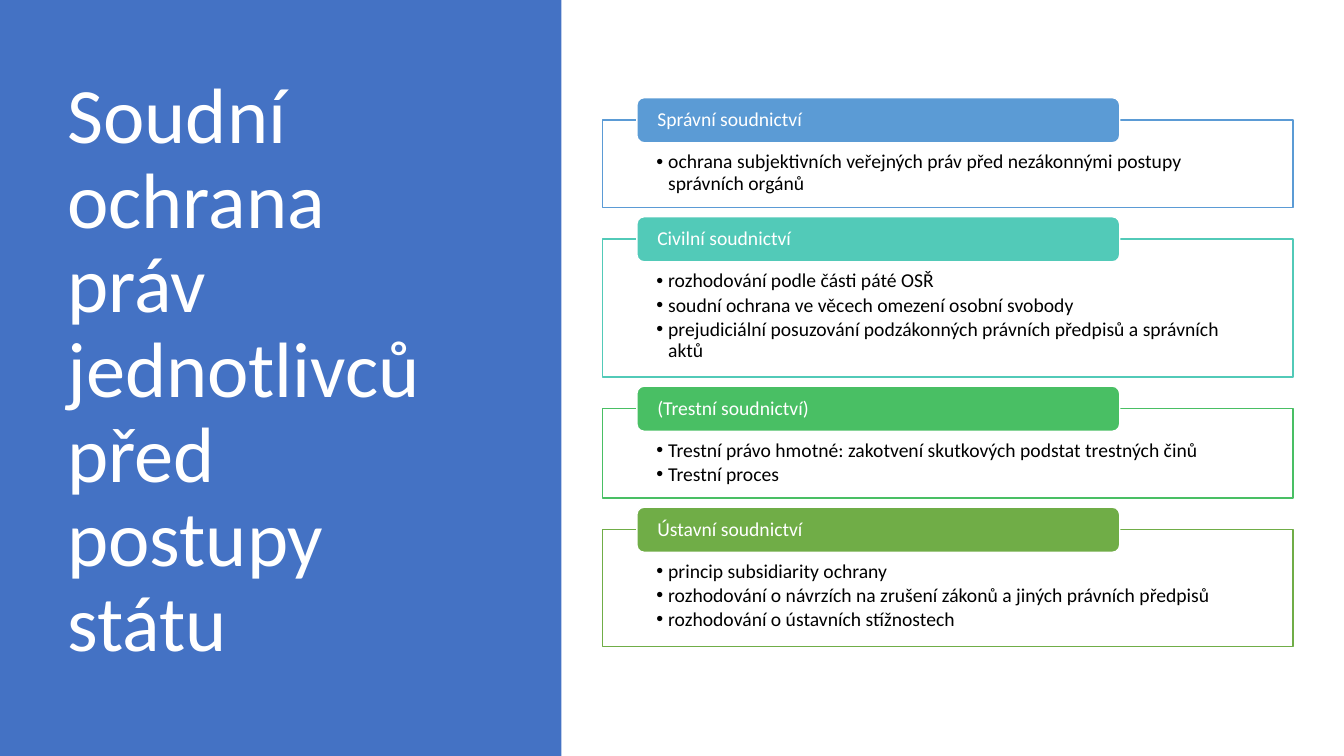
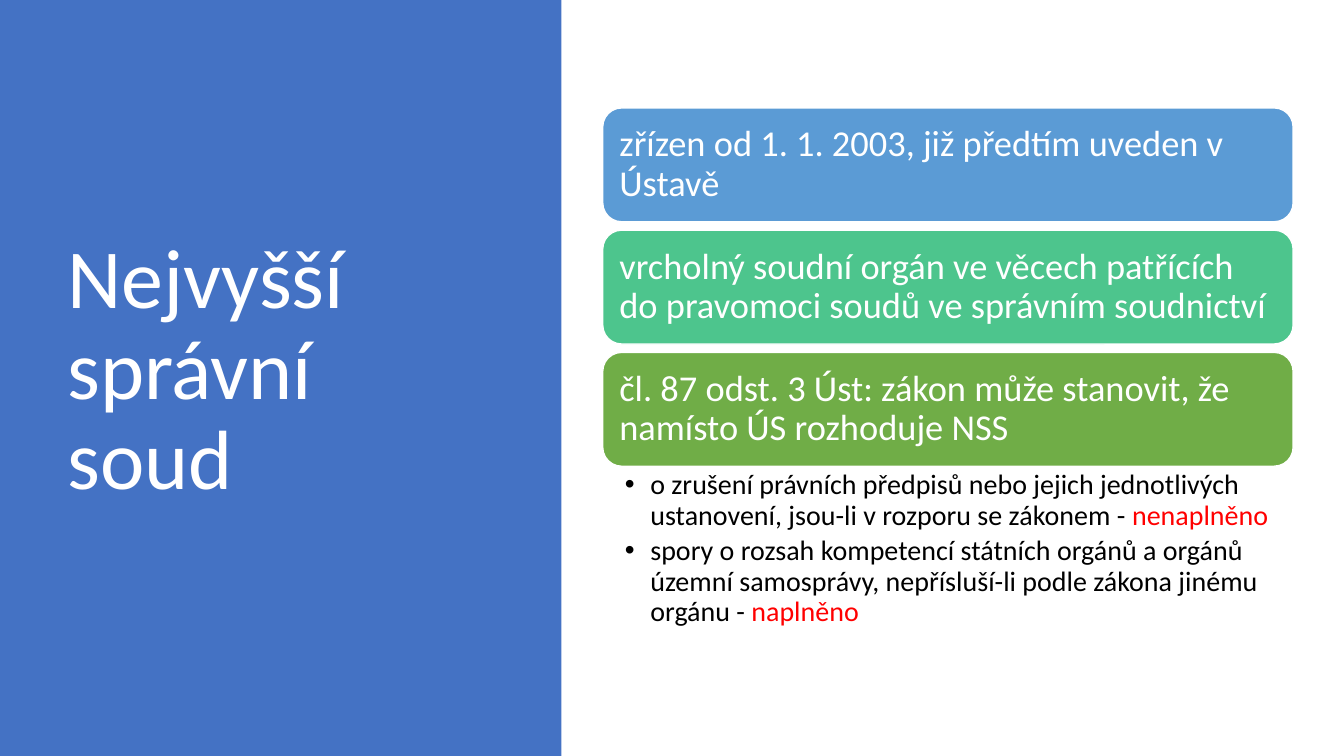
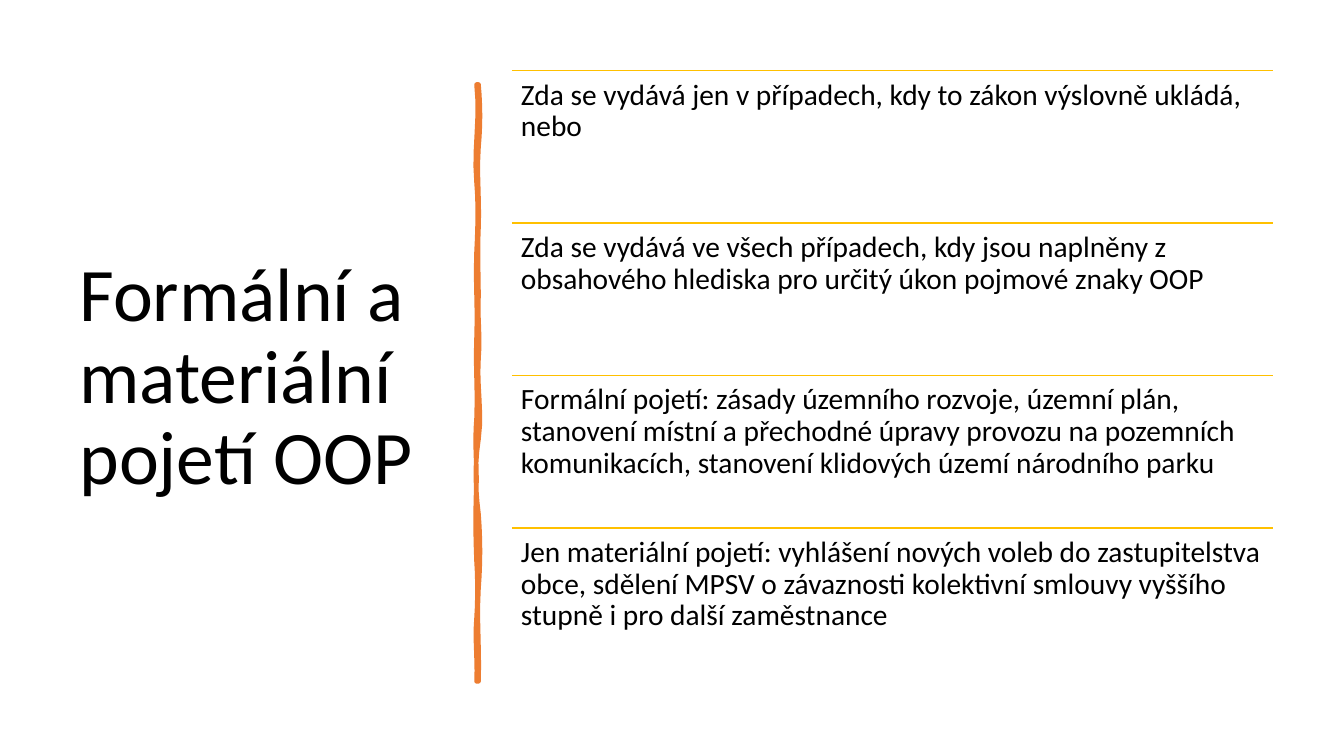
"""Build three slides on judicial protection and the formal and material concept of measures."""
from dataclasses import dataclass

from lxml import etree
from pptx import Presentation
from pptx.dml.color import RGBColor
from pptx.enum.shapes import MSO_CONNECTOR, MSO_SHAPE
from pptx.enum.text import MSO_ANCHOR, PP_ALIGN
from pptx.oxml.ns import qn
from pptx.util import Cm, Pt

RECTANGLE = MSO_SHAPE.RECTANGLE
ROUNDED = MSO_SHAPE.ROUNDED_RECTANGLE
STRAIGHT = MSO_CONNECTOR.STRAIGHT
TOP = MSO_ANCHOR.TOP
MIDDLE = MSO_ANCHOR.MIDDLE
LEFT = PP_ALIGN.LEFT

FONT = "Calibri"
WHITE, BLACK, RED = "FFFFFF", "000000", "FF0000"
BLUE, ORANGE, GOLD = "4472C4", "ED7D31", "FFC000"
SLIDE_WIDTH, SLIDE_HEIGHT = 33.87, 19.05
PANEL_WIDTH = 14.15
CONTENT_LEFT, CONTENT_WIDTH = 15.19, 17.4


@dataclass(frozen=True)
class Box:
    left: float
    top: float
    width: float
    height: float


@dataclass(frozen=True)
class TextStyle:
    size: float
    color: str
    anchor: MSO_ANCHOR = TOP
    insets: tuple[float, float, float, float] = (0.25, 0.13, 0.25, 0.13)
    bullet_indent: float = 0
    space_after: float = 0


@dataclass(frozen=True)
class Run:
    text: str
    color: str | None = None


@dataclass(frozen=True)
class Card:
    heading: str
    bullets: tuple[str, ...]
    height: float
    color: str


@dataclass(frozen=True)
class Banner:
    text: str
    color: str


@dataclass(frozen=True)
class Wave:
    end: float
    first_pull: float
    second_pull: float


PANEL_TITLE_BOX = Box(1.45, 1.73, 10.57, 15.29)
PLAIN_TITLE_BOX = Box(1.75, 1.78, 9.5, 15.52)

CARD_TOP, CARD_GAP = 3.02, 0.79
CARD_STYLE = TextStyle(14, BLACK, TOP, (1.35, 0.81, 1.35, 0.28), 0.3, 2.1)
HEADING_STYLE = TextStyle(14, WHITE, MIDDLE, (0.46, 0, 0.46, 0))
HEADING_LEFT, HEADING_WIDTH, HEADING_HEIGHT, HEADING_RISE = 16.05, 12.17, 1.14, 0.56
CARDS = (
    Card("Správní soudnictví",
         ("ochrana subjektivních veřejných práv před nezákonnými postupy správních orgánů",),
         2.21, "5B9BD5"),
    Card("Civilní soudnictví",
         ("rozhodování podle části páté OSŘ",
          "soudní ochrana ve věcech omezení osobní svobody",
          "prejudiciální posuzování podzákonných právních předpisů a správních aktů"),
         3.48, "52CAB8"),
    Card("(Trestní soudnictví)",
         ("Trestní právo hmotné: zakotvení skutkových podstat trestných činů",
          "Trestní proces"),
         2.26, "49BF64"),
    Card("Ústavní soudnictví",
         ("princip subsidiarity ochrany",
          "rozhodování o návrzích na zrušení zákonů a jiných právních předpisů",
          "rozhodování o ústavních stížnostech"),
         2.95, "70AD47"),
)

BANNER_TOP, BANNER_HEIGHT, BANNER_PITCH = 2.72, 2.87, 3.08
BANNER_STYLE = TextStyle(26, WHITE, MIDDLE, (0.28, 0.28, 0.28, 0.28))
DETAIL_STYLE = TextStyle(20, BLACK, TOP, (0.56, 0.1, 0.51, 0.1), 0.64, 4)
BANNERS = (
    Banner("zřízen od 1. 1. 2003, již předtím uveden v Ústavě", "5B9BD5"),
    Banner("vrcholný soudní orgán ve věcech patřících do pravomoci soudů ve správním soudnictví",
           "4DC58D"),
    Banner("čl. 87 odst. 3 Úst: zákon může stanovit, že namísto ÚS rozhoduje NSS", "70AD47"),
)
DETAILS = (
    (Run("o zrušení právních předpisů nebo jejich jednotlivých ustanovení, "
         "jsou-li v rozporu se zákonem - "), Run("nenaplněno", RED)),
    (Run("spory o rozsah kompetencí státních orgánů a orgánů územní samosprávy, "
         "nepřísluší-li podle zákona jinému orgánu - "), Run("naplněno", RED)),
)

ROW_LEFT, ROW_TOP, ROW_WIDTH, ROW_HEIGHT = 12.9, 1.78, 19.18, 3.84
ROW_STYLE = TextStyle(21, BLACK, TOP, (0.23, 0.23, 0.23, 0.23))
ROWS = (
    "Zda se vydává jen v případech, kdy to zákon výslovně ukládá, nebo",
    "Zda se vydává ve všech případech, kdy jsou naplněny z obsahového hlediska "
    "pro určitý úkon pojmové znaky OOP",
    "Formální pojetí: zásady územního rozvoje, územní plán, stanovení místní a přechodné "
    "úpravy provozu na pozemních komunikacích, stanovení klidových území národního parku",
    "Jen materiální pojetí: vyhlášení nových voleb do zastupitelstva obce, sdělení MPSV "
    "o závaznosti kolektivní smlouvy vyššího stupně i pro další zaměstnance",
)

STROKE_TOP, STROKE_BOTTOM = 2.13, 17.17
STROKE_RIGHT, STROKE_LEFT = 12.06, 12.01
RIGHT_EDGE = (
    Wave(3.71, 0.05, 0.05), Wave(5.74, -0.05, 0.03), Wave(7.47, -0.03, 0),
    Wave(9.04, -0.03, 0.05), Wave(11.07, -0.05, 0.1), Wave(12.95, -0.1, -0.08),
    Wave(14.83, 0.05, 0.05), Wave(STROKE_BOTTOM, -0.05, 0.03),
)
LEFT_EDGE = (
    Wave(15.57, 0.03, -0.05), Wave(14.15, 0.03, 0.03), Wave(12.12, -0.03, -0.03),
    Wave(10.54, 0, -0.05), Wave(8.51, 0.03, -0.03), Wave(6.35, 0.03, -0.03),
    Wave(4.6, 0.03, 0.05), Wave(STROKE_TOP, -0.08, 0.1),
)


def rgb(color: str) -> RGBColor:
    return RGBColor.from_string(color)


def set_values(target, values: dict) -> None:
    for name, value in values.items():
        setattr(target, name, value)


def place(box: Box) -> tuple[Cm, Cm, Cm, Cm]:
    return Cm(box.left), Cm(box.top), Cm(box.width), Cm(box.height)


def add_bullet(paragraph, indent: float) -> None:
    properties = paragraph._p.get_or_add_pPr()
    properties.set("marL", str(Cm(indent)))
    properties.set("indent", str(-Cm(indent)))
    etree.SubElement(properties, qn("a:buFont"), typeface="Arial")
    etree.SubElement(properties, qn("a:buChar"), char="•")


def write_text(shape, paragraphs: tuple[tuple[Run, ...], ...], style: TextStyle) -> None:
    frame = shape.text_frame
    left, top, right, bottom = (Cm(inset) for inset in style.insets)
    set_values(frame, {"word_wrap": True, "vertical_anchor": style.anchor,
                       "margin_left": left, "margin_top": top,
                       "margin_right": right, "margin_bottom": bottom})
    for index, runs in enumerate(paragraphs):
        paragraph = frame.add_paragraph() if index else frame.paragraphs[0]
        if style.bullet_indent:
            add_bullet(paragraph, style.bullet_indent)
        set_values(paragraph, {"alignment": LEFT, "line_spacing": 0.9,
                               "space_after": Pt(style.space_after)})
        for item in runs:
            run = paragraph.add_run()
            run.text = item.text
            set_values(run.font, {"name": FONT, "size": Pt(style.size)})
            run.font.color.rgb = rgb(item.color or style.color)


def paint(shape, fill: str, line: str | None = None, width: float = 1) -> None:
    shape.shadow.inherit = False
    shape.fill.solid()
    shape.fill.fore_color.rgb = rgb(fill)
    if line is None:
        shape.line.fill.background()
    else:
        shape.line.color.rgb = rgb(line)
        shape.line.width = Pt(width)


def add_block(slide, kind: MSO_SHAPE, box: Box, fill: str, line: str | None = None):
    shape = slide.shapes.add_shape(kind, *place(box))
    paint(shape, fill, line)
    return shape


def add_text(slide, box: Box, paragraphs: tuple[tuple[Run, ...], ...], style: TextStyle) -> None:
    write_text(slide.shapes.add_textbox(*place(box)), paragraphs, style)


def add_title(slide, text: str, box: Box, size: float, color: str) -> None:
    add_text(slide, box, ((Run(text),),), TextStyle(size, color, MIDDLE))


def add_panel_title(slide, text: str, size: float) -> None:
    add_block(slide, RECTANGLE, Box(0, 0, PANEL_WIDTH, SLIDE_HEIGHT), BLUE)
    add_title(slide, text, PANEL_TITLE_BOX, size, WHITE)


def add_rule(slide, left: float, top: float, width: float) -> None:
    rule = slide.shapes.add_connector(STRAIGHT, Cm(left), Cm(top), Cm(left + width), Cm(top))
    rule.line.color.rgb = rgb(GOLD)
    rule.line.width = Pt(1)
    etree.SubElement(rule._element.spPr, qn("a:effectLst"))


def trace_edge(base: float, start: float, waves: tuple[Wave, ...]) -> list[tuple[Cm, Cm]]:
    steps = 6
    points = []
    for wave in waves:
        for step in range(1, steps + 1):
            t = step / steps
            pull = 3 * t * (1 - t) * ((1 - t) * wave.first_pull + t * wave.second_pull)
            points.append((Cm(base + pull), Cm(start + t * (wave.end - start))))
        start = wave.end
    return points


def add_brush_stroke(slide) -> None:
    builder = slide.shapes.build_freeform(Cm(STROKE_RIGHT), Cm(STROKE_TOP))
    builder.add_line_segments(trace_edge(STROKE_RIGHT, STROKE_TOP, RIGHT_EDGE), close=False)
    builder.add_line_segments([(Cm(STROKE_LEFT), Cm(STROKE_BOTTOM))], close=False)
    builder.add_line_segments(trace_edge(STROKE_LEFT, STROKE_BOTTOM, LEFT_EDGE))
    paint(builder.convert_to_shape(), ORANGE, ORANGE, 3.25)


def build_protection_slide(slide) -> None:
    add_panel_title(slide, "Soudní ochrana práv jednotlivců před postupy státu", 56)
    top = CARD_TOP
    for card in CARDS:
        body = add_block(slide, RECTANGLE, Box(CONTENT_LEFT, top, CONTENT_WIDTH, card.height),
                         WHITE, card.color)
        write_text(body, tuple((Run(bullet),) for bullet in card.bullets), CARD_STYLE)
        heading_box = Box(HEADING_LEFT, top - HEADING_RISE, HEADING_WIDTH, HEADING_HEIGHT)
        heading = add_block(slide, ROUNDED, heading_box, card.color, WHITE)
        write_text(heading, ((Run(card.heading),),), HEADING_STYLE)
        top += card.height + CARD_GAP


def build_court_slide(slide) -> None:
    add_panel_title(slide, "Nejvyšší správní soud", 60)
    for index, banner in enumerate(BANNERS):
        box = Box(CONTENT_LEFT, BANNER_TOP + index * BANNER_PITCH, CONTENT_WIDTH, BANNER_HEIGHT)
        shape = add_block(slide, ROUNDED, box, banner.color, WHITE)
        write_text(shape, ((Run(banner.text),),), BANNER_STYLE)
    add_text(slide, Box(CONTENT_LEFT, 11.76, CONTENT_WIDTH, 4.27), DETAILS, DETAIL_STYLE)


def build_concept_slide(slide) -> None:
    add_title(slide, "Formální a materiální pojetí OOP", PLAIN_TITLE_BOX, 54, BLACK)
    add_brush_stroke(slide)
    for index, text in enumerate(ROWS):
        top = ROW_TOP + index * ROW_HEIGHT
        add_rule(slide, ROW_LEFT, top, ROW_WIDTH)
        add_text(slide, Box(ROW_LEFT, top, ROW_WIDTH, ROW_HEIGHT), ((Run(text),),), ROW_STYLE)


def main() -> None:
    presentation = Presentation()
    set_values(presentation, {"slide_width": Cm(SLIDE_WIDTH), "slide_height": Cm(SLIDE_HEIGHT)})
    blank = presentation.slide_layouts[6]
    for build in (build_protection_slide, build_court_slide, build_concept_slide):
        build(presentation.slides.add_slide(blank))
    presentation.save("out.pptx")


if __name__ == "__main__":
    main()
